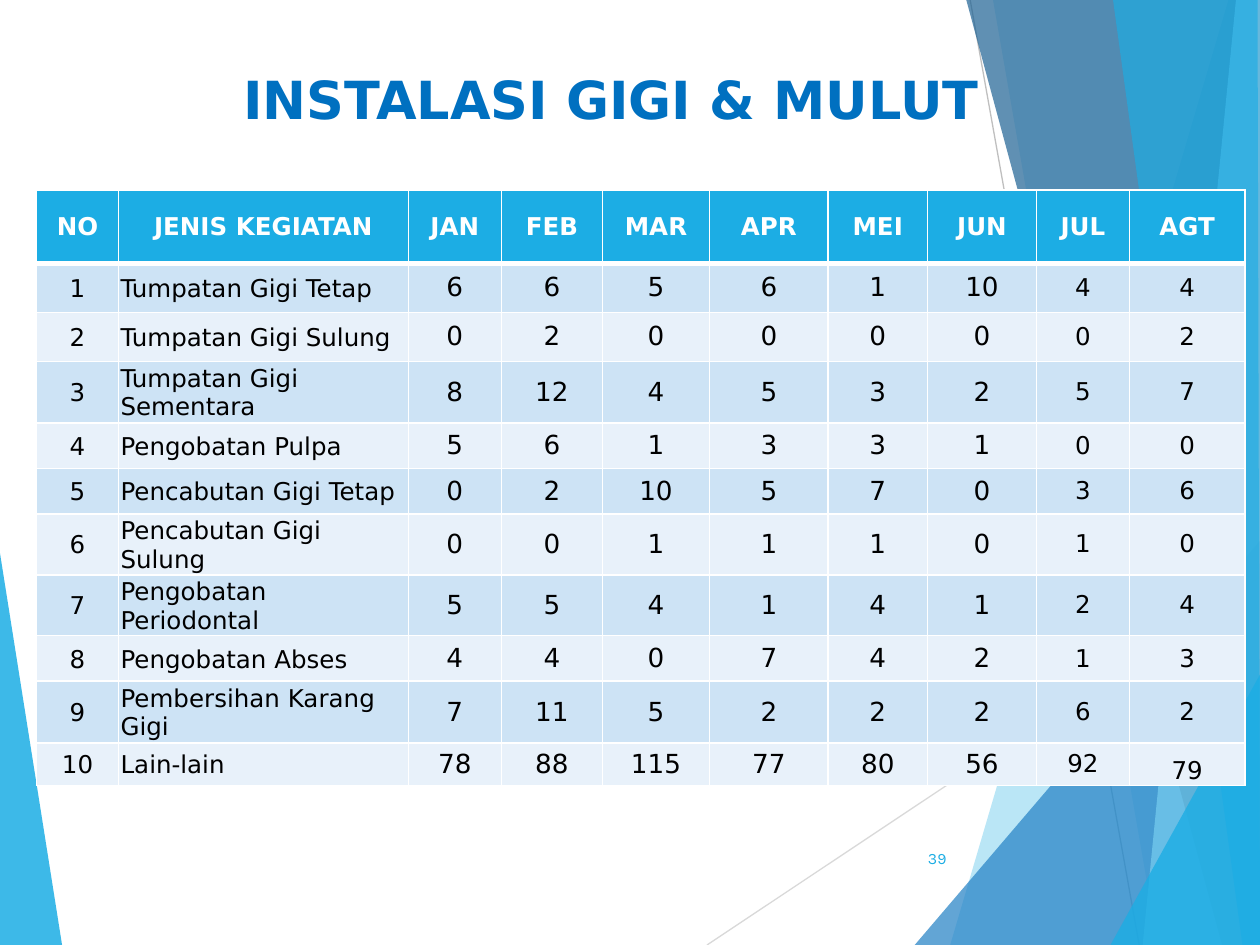
import dataclasses

import lxml.etree
import pptx
import pptx.dml.color
import pptx.enum.shapes
import pptx.enum.text
import pptx.oxml.ns
import pptx.util

Pt = pptx.util.Pt
qn = pptx.oxml.ns.qn
Align = pptx.enum.text.PP_ALIGN
Anchor = pptx.enum.text.MSO_ANCHOR


@dataclasses.dataclass(frozen=True)
class Theme:
    sans: str = "DejaVu Sans"
    small: str = "Karla"
    title: str = "0070C0"
    sky: str = "1CADE4"
    blue: str = "2683C6"
    navy: str = "1D6294"
    pale: str = "77CEEF"
    white: str = "FFFFFF"
    black: str = "000000"
    rays: tuple = ("D9D9D9", "BFBFBF")
    bands: tuple = ("CDE3F5", "E8F1FA")
    head_size: int = 30
    cell_size: int = 14
    count_size: int = 15
    page_size: int = 9


def rgb(code):
    return pptx.dml.color.RGBColor.from_string(code)


def apply(target, values):
    for name, value in values.items():
        setattr(target, name, value)


def pads(left, top, right, bottom):
    return {"margin_left": Pt(left), "margin_top": Pt(top),
            "margin_right": Pt(right), "margin_bottom": Pt(bottom)}


class Deck:
    def __init__(self, theme, width, height):
        self.theme = theme
        self.file = pptx.Presentation()
        apply(self.file, {"slide_width": Pt(width), "slide_height": Pt(height)})
        self.slide = self.file.slides.add_slide(self.file.slide_layouts[6])

    def label(self, frame, text, color, size, align, bold=False, font=None):
        para = frame.paragraphs[0]
        para.alignment = align
        run = para.add_run()
        run.text = text
        apply(run.font, {"name": font or self.theme.sans, "size": Pt(size), "bold": bold})
        run.font.color.rgb = rgb(color)

    def text(self, box, text, frame, **style):
        shape = self.slide.shapes.add_textbox(*map(Pt, box))
        apply(shape.text_frame, {"word_wrap": True, **frame})
        self.label(shape.text_frame, text, **style)

    def line(self, start, end, color):
        link = self.slide.shapes.add_connector(
            pptx.enum.shapes.MSO_CONNECTOR.STRAIGHT, *map(Pt, start + end))
        link.line.color.rgb = rgb(color)
        link.line.width = Pt(0.75)
        lxml.etree.SubElement(link._element.spPr, qn("a:effectLst"))

    def facet(self, points, color, alpha):
        spots = [(Pt(x), Pt(y)) for x, y in points]
        pen = self.slide.shapes.build_freeform(*spots[0])
        pen.add_line_segments(spots[1:], close=True)
        shape = pen.convert_to_shape()
        shape.shadow.inherit = False
        shape.fill.solid()
        shape.fill.fore_color.rgb = rgb(color)
        tint = shape._element.spPr.find(".//" + qn("a:srgbClr"))
        lxml.etree.SubElement(tint, qn("a:alpha"), val=str(alpha * 1000))
        shape.line.fill.background()

    def table(self, left, top, widths, heights):
        frame = self.slide.shapes.add_table(
            len(heights), len(widths), Pt(left), Pt(top), Pt(sum(widths)), Pt(sum(heights)))
        grid = frame.table
        apply(grid, {"first_row": False, "horz_banding": False})
        for col, width in zip(grid.columns, widths):
            col.width = Pt(width)
        for row, height in zip(grid.rows, heights):
            row.height = Pt(height)
        return grid

    def cell(self, cell, text, fill, edges, frame, **style):
        props = cell._tc.get_or_add_tcPr()
        for side, width in zip("LRTB", edges):
            edge = lxml.etree.SubElement(props, qn("a:ln" + side), w=str(Pt(width)))
            paint = lxml.etree.SubElement(edge, qn("a:solidFill"))
            lxml.etree.SubElement(paint, qn("a:srgbClr"), val=self.theme.white)
        cell.fill.solid()
        cell.fill.fore_color.rgb = rgb(fill)
        apply(cell, frame)
        self.label(cell.text_frame, text, **style)


HEADS = ["NO", "JENIS KEGIATAN", "JAN", "FEB", "MAR", "APR", "MEI", "JUN", "JUL", "AGT"]
CARE = [
    ("Tumpatan Gigi Tetap", [6, 6, 5, 6, 1, 10, 4, 4]),
    ("Tumpatan Gigi Sulung", [0, 2, 0, 0, 0, 0, 0, 2]),
    ("Tumpatan Gigi Sementara", [8, 12, 4, 5, 3, 2, 5, 7]),
    ("Pengobatan Pulpa", [5, 6, 1, 3, 3, 1, 0, 0]),
    ("Pencabutan Gigi Tetap", [0, 2, 10, 5, 7, 0, 3, 6]),
    ("Pencabutan Gigi Sulung", [0, 0, 1, 1, 1, 0, 1, 0]),
    ("Pengobatan Periodontal", [5, 5, 4, 1, 4, 1, 2, 4]),
    ("Pengobatan Abses", [4, 4, 0, 7, 4, 2, 1, 3]),
    ("Pembersihan Karang Gigi", [7, 11, 5, 2, 2, 2, 6, 2]),
    ("Lain-lain", [78, 88, 115, 77, 80, 56, 92, 79]),
]
WIDTHS = [46.8, 165.6, 53.2, 57.8, 61.2, 67.8, 56.7, 62.4, 53, 66.2]
HEIGHTS = [41.8, 28, 28, 35.2, 26, 26, 34, 34, 26, 35.2, 24.4]


def main():
    look = Theme()
    wide, high = 720, 540
    deck = Deck(look, wide, high)

    # Background facets and thin lines
    base, peak = (wide, high), (wide, 0)
    deck.facet([(0, 316), (35.5, high), (0, high)], look.sky, 85)
    deck.line((404, high), (wide, 329.5), look.rays[0])
    deck.line((554.4, 0), (651, high), look.rays[1])
    for points, color, alpha in [
        ([(702, 0), (543, high), base, peak], look.sky, 30),
        ([(567.4, 0), (661.7, high), base, peak], look.sky, 20),
        ([(522.7, high), (wide, 309), base], look.blue, 72),
        ([(552.2, 0), (698.4, high), base, peak], look.navy, 70),
        ([(706.3, 0), (653, high), base, peak], look.pale, 70),
        ([(636, 0), (710, high), base, (718.6, 0)], look.sky, 65),
        ([(634.6, high), (wide, 385.5), base], look.sky, 80),
    ]:
        deck.facet(points, color, alpha)

    # Title
    deck.text((21.6, 31.7, 655.2, 59), "INSTALASI GIGI & MULUT",
              {"vertical_anchor": Anchor.TOP, **pads(7.2, 6.8, 7.2, 3.6)},
              color=look.title, size=look.head_size, align=Align.CENTER, bold=True)

    # Table header
    grid = deck.table(20.9, 108.7, WIDTHS, HEIGHTS)
    middle = {"vertical_anchor": Anchor.MIDDLE}
    for col, head in enumerate(HEADS):
        deck.cell(grid.cell(0, col), head, look.sky, (1, 1, 1, 3),
                  {**middle, **pads(10.8, 5.4, 10.8, 5.4)},
                  color=look.white, size=look.cell_size, align=Align.CENTER, bold=True)

    # Table body: months up to JUN are set larger
    july = HEADS.index("JUL")
    for row, (name, counts) in enumerate(CARE, 1):
        for col, value in enumerate([row, name, *counts]):
            space = pads(1.2, 1.2, 1.2, 0) if col < 2 else pads(0, 0, 0, 0)
            deck.cell(grid.cell(row, col), str(value), look.bands[(row - 1) % 2],
                      (1, 1, 3 if row == 1 else 1, 1), {**middle, **space},
                      color=look.black,
                      size=look.count_size if 2 <= col < july else look.cell_size,
                      align=Align.LEFT if col == 1 else Align.CENTER)
    grid.cell(len(CARE), len(HEADS) - 1).vertical_anchor = Anchor.BOTTOM

    # Page number
    deck.text((507.6, 476, 40.3, 28.8), "39", middle, color=look.sky,
              size=look.page_size, align=Align.RIGHT, font=look.small)

    deck.file.save("out.pptx")


if __name__ == "__main__":
    main()
